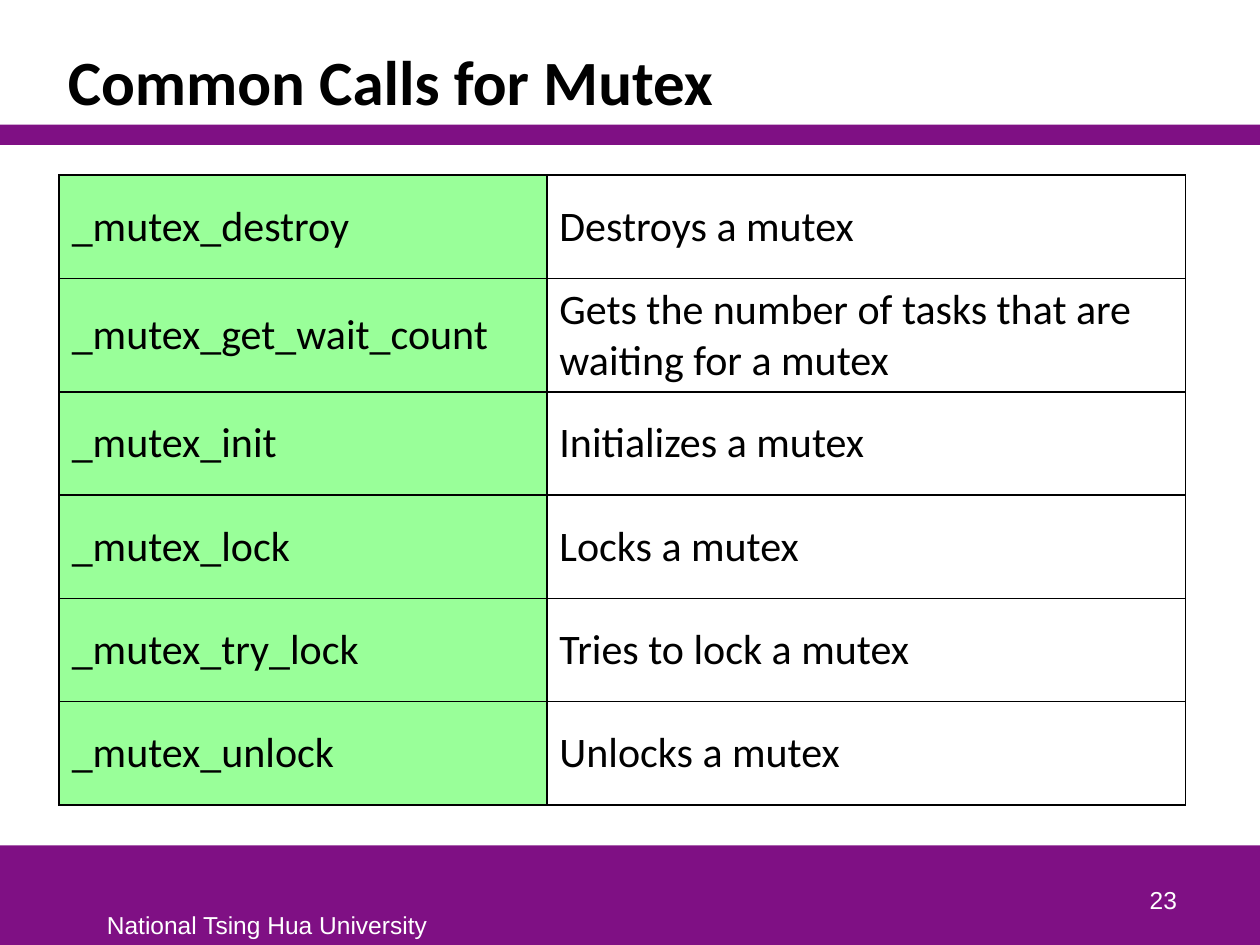
from dataclasses import dataclass

from lxml.etree import SubElement
from pptx import Presentation
from pptx.dml.color import RGBColor as RGB
from pptx.enum.shapes import MSO_SHAPE as Shape
from pptx.enum.text import MSO_ANCHOR as Anchor, PP_ALIGN as Align
from pptx.oxml.ns import qn
from pptx.util import Inches, Pt


@dataclass(frozen=True)
class Theme:
    purple: str = "7F1084"
    green: str = "99FF99"
    black: str = "000000"
    white: str = "FFFFFF"
    heading_font: str = "Calibri"
    footer_font: str = "Arial"
    title_size: int = 36
    table_size: int = 24
    footer_size: int = 14
    border_width: int = 1


THEME = Theme()

MUTEX_CALLS = [
    ("_mutex_destroy", "Destroys a mutex"),
    ("_mutex_get_wait_count",
     "Gets the number of tasks that are waiting for a mutex"),
    ("_mutex_init", "Initializes a mutex"),
    ("_mutex_lock", "Locks a mutex"),
    ("_mutex_try_lock", "Tries to lock a mutex"),
    ("_mutex_unlock", "Unlocks a mutex"),
]
COLUMN_WIDTHS = (3.87, 5.07)
ROW_HEIGHT = 0.82


def write_text(frame, text, *, font, size, color, bold=False,
               align=Align.LEFT, line_spacing=None):
    """Fill a text frame with one formatted paragraph."""
    paragraph = frame.paragraphs[0]
    paragraph.alignment = align
    paragraph.line_spacing = line_spacing
    run = paragraph.add_run()
    run.text = text
    run.font.name = font
    run.font.size = Pt(size)
    run.font.bold = bold
    run.font.color.rgb = RGB.from_string(color)


def add_band(slide, top, height):
    """Draw a full-width purple band."""
    band = slide.shapes.add_shape(
        Shape.RECTANGLE, 0, Inches(top), Inches(10), Inches(height))
    band.shadow.inherit = False
    band.fill.solid()
    band.fill.fore_color.rgb = RGB.from_string(THEME.purple)
    band.line.fill.background()


def add_label(slide, text, left, top, width, height, *,
              anchor=Anchor.TOP, wrap=True, **text_format):
    label = slide.shapes.add_textbox(
        Inches(left), Inches(top), Inches(width), Inches(height))
    frame = label.text_frame
    frame.word_wrap = wrap
    frame.vertical_anchor = anchor
    write_text(frame, text, **text_format)


def set_borders(cell, color, width):
    properties = cell._tc.get_or_add_tcPr()
    for side in ("a:lnL", "a:lnR", "a:lnT", "a:lnB"):
        border = SubElement(properties, qn(side), w=str(Pt(width)))
        fill = SubElement(border, qn("a:solidFill"))
        SubElement(fill, qn("a:srgbClr"), val=color)


def add_calls_table(slide, left, top):
    table = slide.shapes.add_table(
        len(MUTEX_CALLS), len(COLUMN_WIDTHS), Inches(left), Inches(top),
        Inches(sum(COLUMN_WIDTHS)), Inches(ROW_HEIGHT * len(MUTEX_CALLS))).table
    table.first_row = False
    table.horz_banding = False
    for column, width in zip(table.columns, COLUMN_WIDTHS):
        column.width = Inches(width)

    for row, call in enumerate(MUTEX_CALLS):
        table.rows[row].height = Inches(ROW_HEIGHT)
        for column, text in enumerate(call):
            cell = table.cell(row, column)
            cell.vertical_anchor = Anchor.MIDDLE
            set_borders(cell, THEME.black, THEME.border_width)
            if column == 0:
                cell.fill.solid()
                cell.fill.fore_color.rgb = RGB.from_string(THEME.green)
            else:
                cell.fill.background()
            write_text(cell.text_frame, text, font=THEME.heading_font,
                       size=THEME.table_size, color=THEME.black)


def main():
    deck = Presentation()
    deck.slide_width, deck.slide_height = Inches(10), Inches(7.5)
    slide = deck.slides.add_slide(deck.slide_layouts[6])

    # Footer and title bands
    add_band(slide, 6.71, 0.79)
    add_band(slide, 0.99, 0.16)

    # Footer text
    footer = dict(font=THEME.footer_font, size=THEME.footer_size,
                  color=THEME.white)
    add_label(slide, "National Tsing Hua University", 0.75, 7.17, 2.76, 0.33,
              wrap=False, **footer)
    add_label(slide, "23", 7.36, 6.81, 2.08, 0.5,
              anchor=Anchor.BOTTOM, align=Align.RIGHT, **footer)

    # Title
    add_label(slide, "Common Calls for Mutex", 0.44, 0.25, 8.97, 0.74,
              anchor=Anchor.BOTTOM, font=THEME.heading_font,
              size=THEME.title_size, color=THEME.black, bold=True,
              line_spacing=0.85)

    # Calls and their meaning
    add_calls_table(slide, 0.47, 1.39)

    deck.save("out.pptx")


if __name__ == "__main__":
    main()
